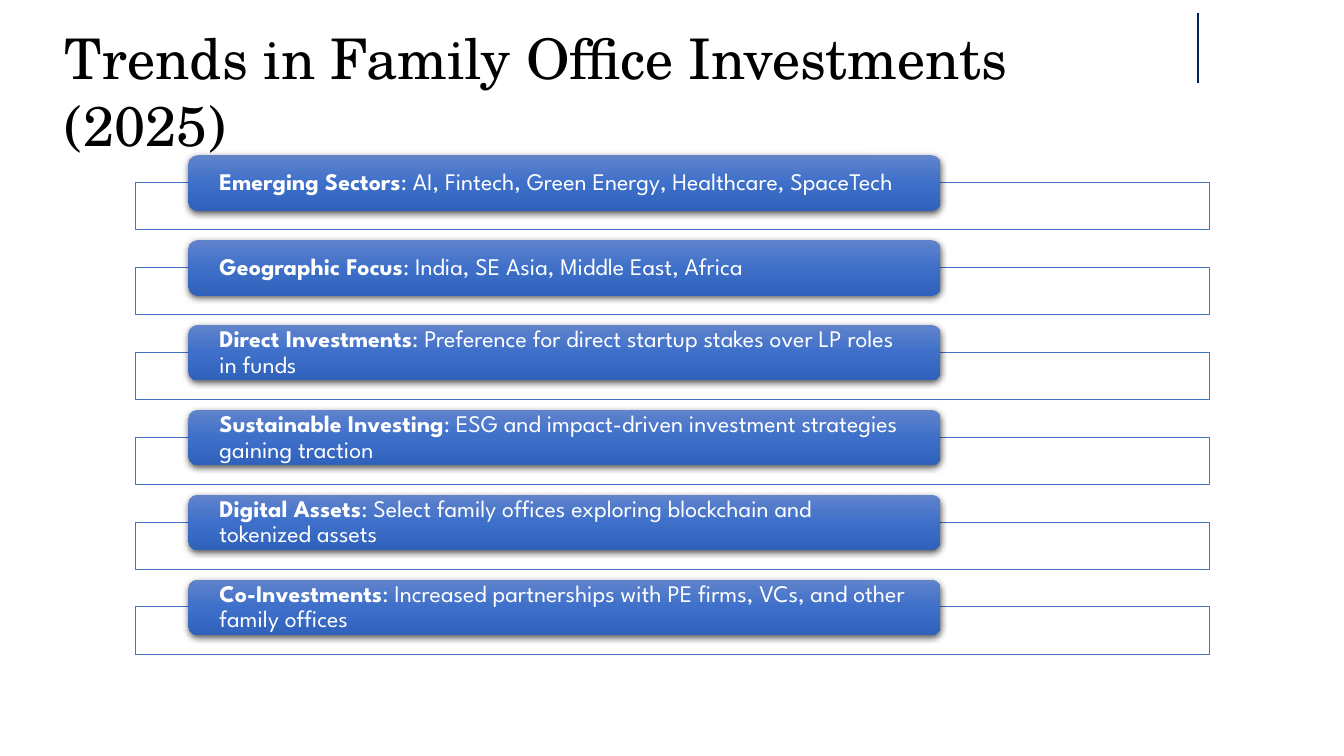
import copy
import dataclasses

import lxml.etree
import pptx
import pptx.dml.color
import pptx.enum.shapes
import pptx.enum.text
import pptx.oxml.ns
import pptx.shapes.autoshape
import pptx.slide
import pptx.text.text
import pptx.util

Inches = pptx.util.Inches
Pt = pptx.util.Pt
qn = pptx.oxml.ns.qn
Shape = pptx.enum.shapes.MSO_SHAPE


@dataclasses.dataclass(frozen=True)
class Theme:
    title_font: str = "TeX Gyre Schola"
    body_font: str = "League Spartan"
    title_size: float = 40
    body_size: float = 17
    title_color: str = "000000"
    body_color: str = "FFFFFF"
    frame_fill: str = "FFFFFF"
    frame_line: str = "4472C4"
    accent: str = "002060"
    shadow: str = "000000"
    gradient: tuple[tuple[float, str], ...] = ((0, "6183CB"), (0.5, "3E70CA"), (1, "3062BB"))


@dataclasses.dataclass(frozen=True)
class Trend:
    heading: str
    detail: str


THEME = Theme()
TITLE_LINES = ("Trends in Family Office Investments", "(2025)")
TRENDS = (
    Trend("Emerging Sectors", "AI, Fintech, Green Energy, Healthcare, SpaceTech"),
    Trend("Geographic Focus", "India, SE Asia, Middle East, Africa"),
    Trend("Direct Investments", "Preference for direct startup stakes over LP roles in funds"),
    Trend("Sustainable Investing", "ESG and impact-driven investment strategies gaining traction"),
    Trend("Digital Assets", "Select family offices exploring blockchain and tokenized assets"),
    Trend("Co-Investments", "Increased partnerships with PE firms, VCs, and other family offices"),
)
FIRST_TOP, LAST_TOP = 1.54, 5.75
PITCH = (LAST_TOP - FIRST_TOP) / (len(TRENDS) - 1)
FRAME_DROP = 0.27


def rgb(code: str) -> pptx.dml.color.RGBColor:
    return pptx.dml.color.RGBColor.from_string(code)


def add_text(paragraph: pptx.text.text._Paragraph, text: str, *, font: str,
             size: float, color: str, bold: bool = False) -> None:
    run = paragraph.add_run()
    run.text = text
    run.font.name = font
    run.font.size = Pt(size)
    run.font.color.rgb = rgb(color)
    run.font.bold = bold


def add_block(slide: pptx.slide.Slide, kind: Shape, left: float, top: float,
              width: float, height: float) -> pptx.shapes.autoshape.Shape:
    block = slide.shapes.add_shape(kind, Inches(left), Inches(top), Inches(width), Inches(height))
    block.shadow.inherit = False
    return block


def fill_gradient(bar: pptx.shapes.autoshape.Shape) -> None:
    bar.fill.gradient()
    bar.fill.gradient_angle = 270
    stop_list = bar._element.spPr.find(".//" + qn("a:gsLst"))
    stop_list.append(copy.deepcopy(stop_list[-1]))
    for stop, (position, color) in zip(bar.fill.gradient_stops, THEME.gradient):
        stop.position = position
        stop.color.rgb = rgb(color)


def cast_shadow(bar: pptx.shapes.autoshape.Shape) -> None:
    effects = bar._element.spPr.find(qn("a:effectLst"))
    shadow = lxml.etree.SubElement(effects, qn("a:outerShdw"), blurRad=str(Pt(4.5)),
                                   dist=str(Pt(1.5)), dir="5400000", algn="ctr", rotWithShape="0")
    color = lxml.etree.SubElement(shadow, qn("a:srgbClr"), val=THEME.shadow)
    lxml.etree.SubElement(color, qn("a:alpha"), val="63000")


def add_trend(slide: pptx.slide.Slide, trend: Trend, top: float) -> None:
    frame = add_block(slide, Shape.RECTANGLE, 1.34, top + FRAME_DROP, 10.66, 0.47)
    frame.fill.solid()
    frame.fill.fore_color.rgb = rgb(THEME.frame_fill)
    fill_color = frame._element.spPr.find(qn("a:solidFill"))[0]
    lxml.etree.SubElement(fill_color, qn("a:alpha"), val="90000")
    frame.line.color.rgb = rgb(THEME.frame_line)
    frame.line.width = Pt(0.5)

    bar = add_block(slide, Shape.ROUNDED_RECTANGLE, 1.87, top, 7.46, 0.55)
    fill_gradient(bar)
    cast_shadow(bar)
    bar.line.fill.background()

    label = bar.text_frame
    label.word_wrap = True
    label.vertical_anchor = pptx.enum.text.MSO_ANCHOR.MIDDLE
    label.margin_left = label.margin_right = Inches(0.28)
    label.margin_top = label.margin_bottom = 0
    paragraph = label.paragraphs[0]
    paragraph.alignment = pptx.enum.text.PP_ALIGN.LEFT
    paragraph.line_spacing = 0.9
    for text, bold in ((trend.heading, True), (f": {trend.detail}", False)):
        add_text(paragraph, text, font=THEME.body_font, size=THEME.body_size,
                 color=THEME.body_color, bold=bold)


def add_title(slide: pptx.slide.Slide) -> None:
    title = slide.shapes.title
    title.left, title.top = Inches(0.54), Inches(0.18)
    title.width, title.height = Inches(12.55), Inches(1.45)
    heading = title.text_frame
    heading.word_wrap = True
    heading.auto_size = pptx.enum.text.MSO_AUTO_SIZE.SHAPE_TO_FIT_TEXT
    heading.vertical_anchor = pptx.enum.text.MSO_ANCHOR.TOP
    for index, line in enumerate(TITLE_LINES):
        paragraph = heading.add_paragraph() if index else heading.paragraphs[0]
        paragraph.alignment = pptx.enum.text.PP_ALIGN.LEFT
        add_text(paragraph, line, font=THEME.title_font, size=THEME.title_size,
                 color=THEME.title_color)


def add_accent(slide: pptx.slide.Slide) -> None:
    accent = slide.shapes.add_connector(pptx.enum.shapes.MSO_CONNECTOR.STRAIGHT, Inches(11.88),
                                        Inches(0.13), Inches(11.88), Inches(0.82))
    accent.line.color.rgb = rgb(THEME.accent)
    accent.line.width = Pt(1.5)
    lxml.etree.SubElement(accent._element.spPr, qn("a:effectLst"))


def main() -> None:
    deck = pptx.Presentation()
    deck.slide_width, deck.slide_height = Inches(13.33), Inches(7.5)
    slide = deck.slides.add_slide(deck.slide_layouts.get_by_name("Title Only"))
    add_accent(slide)
    for row, trend in enumerate(TRENDS):
        add_trend(slide, trend, FIRST_TOP + row * PITCH)
    add_title(slide)
    deck.save("out.pptx")


if __name__ == "__main__":
    main()
